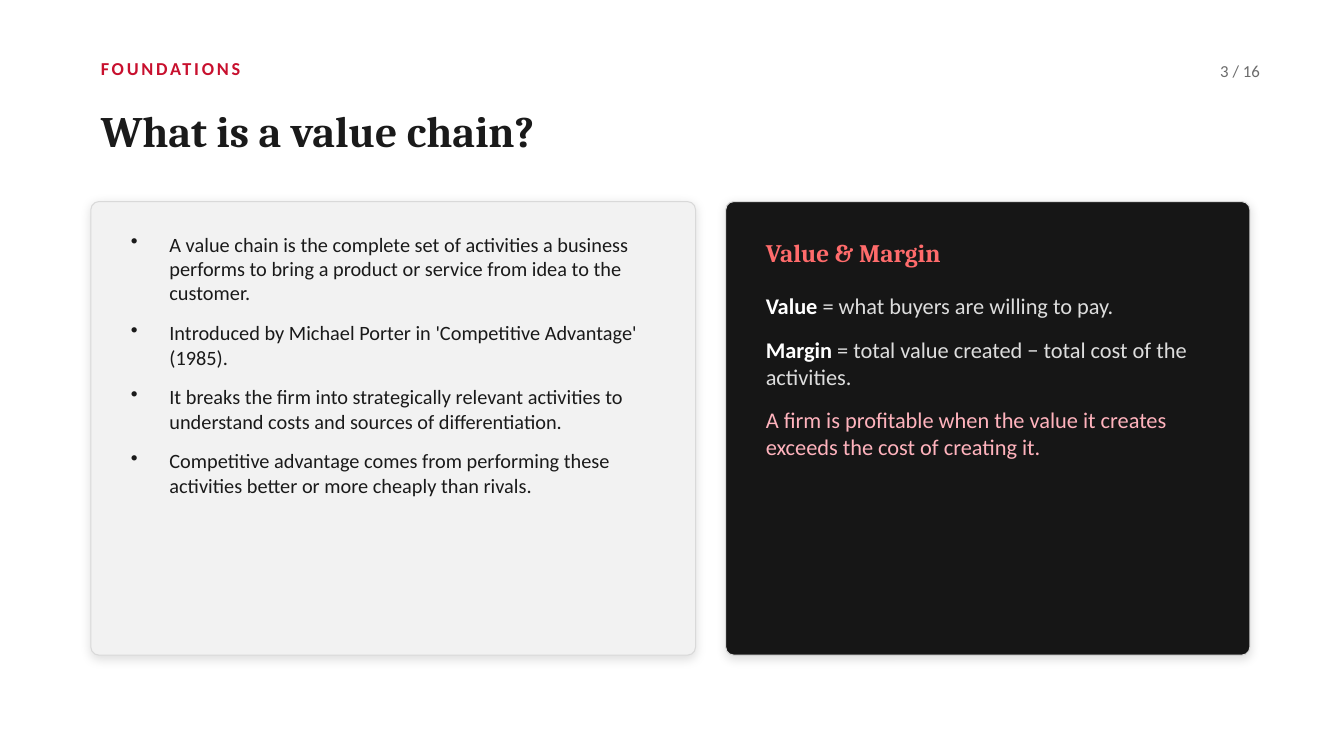
from lxml.etree import SubElement
from pptx import Presentation
from pptx.dml.color import RGBColor
from pptx.enum.shapes import MSO_SHAPE
from pptx.enum.text import MSO_ANCHOR, PP_ALIGN
from pptx.oxml.ns import qn
from pptx.util import Cm, Pt

COLORS = {
    "red": "C8102E", "ink": "1A1A1A", "gray": "6B6B6B",
    "light_card": "F2F2F2", "dark_card": "161616", "border": "D9D9D9",
    "coral": "FF6B6B", "white": "FFFFFF", "silver": "DDDDDD", "pink": "FFB3BD",
    "shadow": "000000",
}
BODY, HEADING = "Calibri", "Cambria"
CARD_TOP, CARD_HEIGHT = 5.08, 11.43

BULLETS = [
    "A value chain is the complete set of activities a business performs "
    "to bring a product or service from idea to the customer.",
    "Introduced by Michael Porter in 'Competitive Advantage' (1985).",
    "It breaks the firm into strategically relevant activities to "
    "understand costs and sources of differentiation.",
    "Competitive advantage comes from performing these activities better "
    "or more cheaply than rivals.",
]
# Each paragraph is a list of (text, color, bold) runs
DEFINITIONS = [
    [("Value", "white", True),
     (" = what buyers are willing to pay.", "silver", False)],
    [("Margin", "white", True),
     (" = total value created − total cost of the activities.", "silver", False)],
    [("A firm is profitable when the value it creates exceeds the cost of "
      "creating it.", "pink", False)],
]


def rgb(name):
    return RGBColor.from_string(COLORS[name])


def add_bullet(p):
    pPr = p._p.get_or_add_pPr()
    indent = Cm(0.97)
    pPr.set("marL", str(indent))
    pPr.set("indent", str(-indent))
    SubElement(pPr, qn("a:buChar"), char="•")


def add_text(s, box, paragraphs, size, font=BODY, anchor=MSO_ANCHOR.MIDDLE,
             align=PP_ALIGN.LEFT, after=0, bullets=False, tracking=0):
    tf = s.shapes.add_textbox(*map(Cm, box)).text_frame
    tf.word_wrap = True
    tf.vertical_anchor = anchor
    for i, runs in enumerate(paragraphs):
        p = tf.add_paragraph() if i else tf.paragraphs[0]
        if bullets:
            add_bullet(p)
        p.alignment = align
        p.space_after = Pt(after)
        for text, color, bold in runs:
            r = p.add_run()
            r.text = text
            r.font.name, r.font.size, r.font.bold = font, Pt(size), bold
            r.font.color.rgb = rgb(color)
            if tracking:
                r._r.get_or_add_rPr().set("spc", str(tracking * 100))


def add_card(s, left, width, fill):
    sp = s.shapes.add_shape(MSO_SHAPE.ROUNDED_RECTANGLE, Cm(left), Cm(CARD_TOP),
                            Cm(width), Cm(CARD_HEIGHT))
    sp.adjustments[0] = 0.018
    sp.fill.solid()
    sp.fill.fore_color.rgb = rgb(fill)
    sp.line.color.rgb = rgb("border")
    sp.line.width = Pt(0.75)
    # Soft shadow straight below the card
    sp.shadow.inherit = False
    effects = sp._element.spPr.find(qn("a:effectLst"))
    shadow = SubElement(effects, qn("a:outerShdw"), blurRad=str(Pt(7)),
                        dist=str(Pt(2)), dir="5400000", rotWithShape="0")
    color = SubElement(shadow, qn("a:srgbClr"), val=COLORS["shadow"])
    SubElement(color, qn("a:alpha"), val="12000")


def main():
    prs = Presentation()
    prs.slide_width, prs.slide_height = Cm(33.87), Cm(19.05)
    s = prs.slides.add_slide(prs.slide_layouts[6])

    # Header
    add_text(s, (2.29, 1.22, 22.86, 1.02), [[("FOUNDATIONS", "red", True)]],
             13, tracking=2)
    add_text(s, (2.29, 2.08, 29.21, 2.41),
             [[("What is a value chain?", "ink", True)]], 31, HEADING)
    add_text(s, (29.46, 1.27, 2.54, 1.02), [[("3 / 16", "gray", False)]],
             12, align=PP_ALIGN.RIGHT)

    # Definition card
    add_card(s, 2.29, 15.24, "light_card")
    add_text(s, (3.05, 5.72, 13.72, 10.41),
             [[(text, "ink", False)] for text in BULLETS], 14.5,
             anchor=MSO_ANCHOR.TOP, after=11, bullets=True)

    # Value and margin card
    add_card(s, 18.29, 13.21, "dark_card")
    add_text(s, (19.05, 5.72, 11.68, 1.27),
             [[("Value & Margin", "coral", True)]], 18, HEADING)
    add_text(s, (19.05, 7.24, 11.68, 8.64), DEFINITIONS, 16,
             anchor=MSO_ANCHOR.TOP, after=12)

    prs.save("out.pptx")


if __name__ == "__main__":
    main()
